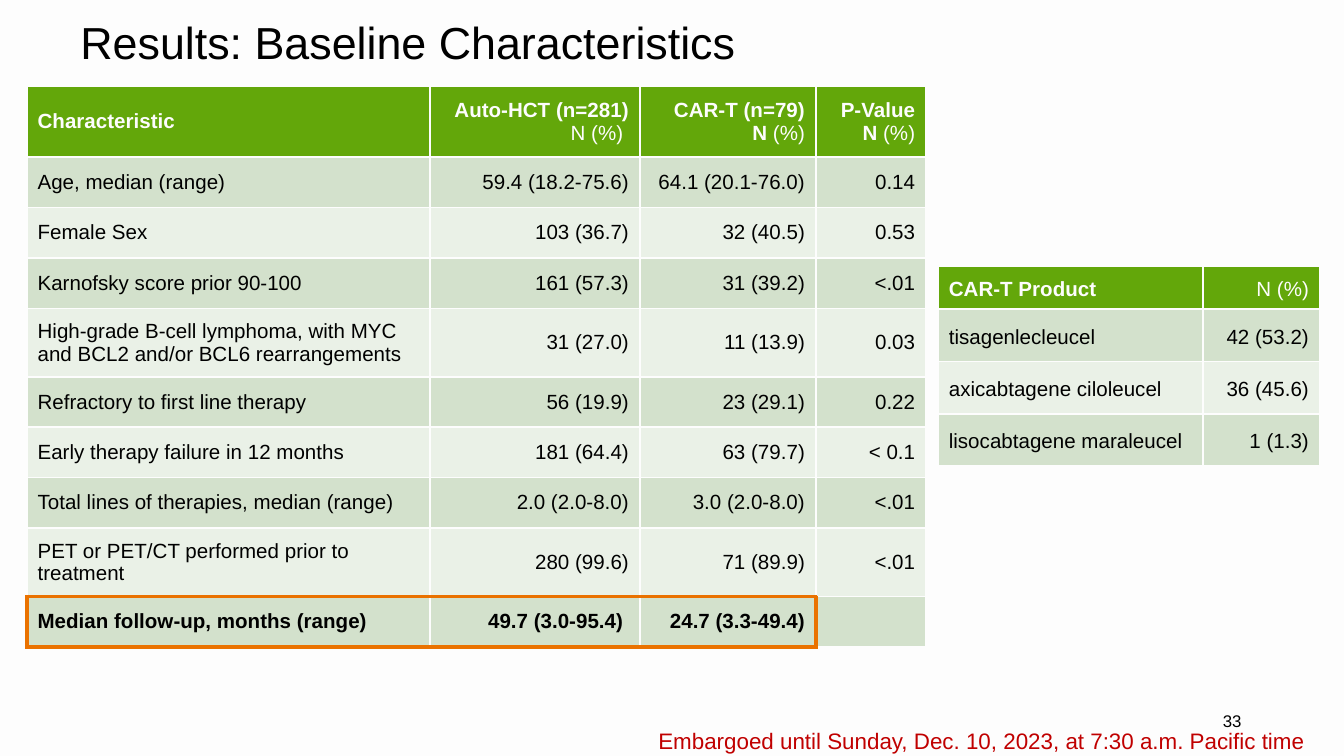
from lxml import etree
from pptx import Presentation
from pptx.dml.color import RGBColor
from pptx.enum.text import MSO_ANCHOR, PP_ALIGN
from pptx.oxml.ns import qn
from pptx.util import Inches, Pt

TOP, MIDDLE, BOTTOM = MSO_ANCHOR.TOP, MSO_ANCHOR.MIDDLE, MSO_ANCHOR.BOTTOM
LEFT, RIGHT = PP_ALIGN.LEFT, PP_ALIGN.RIGHT

COLORS = {
    "paper": "FDFDFD",
    "text": "000000",
    "header": "63A70A",
    "odd": "D3E1CC",
    "even": "EAF1E7",
    "highlight": "EA7200",
    "embargo": "C00000",
}
SIDES = "LRTB"
THIN, HIGHLIGHT_RULE = 1, 2.25

BASELINE_ROWS = [
    ["Characteristic", "Auto-HCT (n=281)\n|N (%) ", "CAR-T (n=79)\nN| (%)", "P-Value\nN| (%)"],
    ["Age, median (range)", "59.4 (18.2-75.6)", "64.1 (20.1-76.0)", "0.14"],
    ["Female Sex", "103 (36.7)", "32 (40.5)", "0.53"],
    ["Karnofsky score prior 90-100", "161 (57.3)", "31 (39.2)", "<.01"],
    ["High-grade B-cell lymphoma, with MYC and BCL2 and/or BCL6 rearrangements",
     "31 (27.0)", "11 (13.9)", "0.03"],
    ["Refractory to first line therapy", "56 (19.9)", "23 (29.1)", "0.22"],
    ["Early therapy failure in 12 months", "181 (64.4)", "63 (79.7)", "< 0.1"],
    ["Total lines of therapies, median (range)", "2.0 (2.0-8.0)", "3.0 (2.0-8.0)", "<.01"],
    ["PET or PET/CT performed prior to treatment", "280 (99.6)", "71 (89.9)", "<.01"],
    ["Median follow-up, months (range)", "49.7 (3.0-95.4) ", "24.7 (3.3-49.4)", ""],
]
PRODUCT_ROWS = [
    ["CAR-T Product", "|N (%)"],
    ["tisagenlecleucel", "42 (53.2)"],
    ["axicabtagene ciloleucel", "36 (45.6)"],
    ["lisocabtagene maraleucel", "1 (1.3)"],
]
PRODUCT_SPACING = {"line_spacing": 1.15, "space_before": Pt(3), "space_after": Pt(3)}


def rgb(name):
    return RGBColor.from_string(COLORS[name])


class Deck:
    """Holds the text style and the slide that is being filled."""

    font = "Arial"
    table_size = 11

    def __init__(self, width, height):
        self.prs = Presentation()
        self.prs.slide_width, self.prs.slide_height = Inches(width), Inches(height)
        self.s = self.prs.slides.add_slide(self.prs.slide_layouts[6])
        fill = self.s.background.fill
        fill.solid()
        fill.fore_color.rgb = rgb("paper")

    def run(self, p, text, size, color, bold=False):
        r = p.add_run()
        r.text = text
        for key, value in {"name": self.font, "size": Pt(size), "bold": bold}.items():
            setattr(r.font, key, value)
        r.font.color.rgb = rgb(color)

    def text(self, box, text, size, color="text", anchor=TOP):
        tf = self.s.shapes.add_textbox(*map(Inches, box)).text_frame
        tf.word_wrap = True
        tf.vertical_anchor = anchor
        self.run(tf.paragraphs[0], text, size, color)

    def border(self, cell, **sides):
        """Draw all four sides thin, except those given as side=(color, points)."""
        props = cell._tc.get_or_add_tcPr()
        for i, side in enumerate(SIDES):
            color, points = sides.get(side, ("paper", THIN))
            tag = qn(f"a:ln{side}")
            for old in props.findall(tag):
                props.remove(old)
            ln = etree.Element(tag, w=str(Pt(points)))
            fill = etree.SubElement(ln, qn("a:solidFill"))
            etree.SubElement(fill, qn("a:srgbClr"), val=COLORS[color])
            props.insert(i, ln)

    def cell(self, cell, text, fill, color, bold, align, spacing):
        """Fill one cell; text after a bar is regular, a newline is a line break."""
        cell.fill.solid()
        cell.fill.fore_color.rgb = rgb(fill)
        layout = {"vertical_anchor": MIDDLE, "margin_left": Inches(0.08),
                  "margin_right": Inches(0.08), "margin_top": 0, "margin_bottom": 0}
        for key, value in layout.items():
            setattr(cell, key, value)
        p = cell.text_frame.paragraphs[0]
        for key, value in {"alignment": align, **spacing}.items():
            setattr(p, key, value)
        for part, weight in zip(text.split("|"), (bold, False)):
            for i, line in enumerate(part.split("\n")):
                if i:
                    p.add_line_break()
                if line:
                    self.run(p, line, self.table_size, color, weight)

    def table(self, left, top, widths, heights, rows, spacing, bold_rows=(0,)):
        box = map(Inches, (left, top, sum(widths), sum(heights)))
        table = self.s.shapes.add_table(len(rows), len(widths), *box).table
        table.first_row = table.horz_banding = False
        for column, width in zip(table.columns, widths):
            column.width = Inches(width)
        for i, (row, height) in enumerate(zip(rows, heights)):
            table.rows[i].height = Inches(height)
            fill = "header" if i == 0 else "odd" if i % 2 else "even"
            for j, text in enumerate(row):
                cell = table.cell(i, j)
                self.cell(cell, text, fill, "text" if i else "paper",
                          i in bold_rows, RIGHT if j else LEFT, spacing)
                self.border(cell)
        return table

    def highlight(self, table, row, count):
        """Frame the first cells of a row, setting both cells at each shared edge."""
        rule = ("highlight", HIGHLIGHT_RULE)
        for j in range(count):
            sides = {"T": rule, "B": rule}
            if j == 0:
                sides["L"] = rule
            if j == count - 1:
                sides["R"] = rule
            self.border(table.cell(row, j), **sides)
            self.border(table.cell(row - 1, j), B=rule)
        self.border(table.cell(row, count), L=rule)


def main():
    deck = Deck(10, 5.625)
    deck.text((0.5, 0.11, 9, 0.45), "Results: Baseline Characteristics", 24, anchor=BOTTOM)

    last = len(BASELINE_ROWS) - 1
    tall = {0: 0.53, 4: 0.51, 8: 0.51}
    heights = [tall.get(i, 0.375) for i in range(last + 1)]
    baseline = deck.table(0.2, 0.64, [3, 1.56, 1.31, 0.82], heights,
                          BASELINE_ROWS, {}, bold_rows=(0, last))
    deck.highlight(baseline, last, 3)

    deck.table(6.98, 1.98, [1.97, 0.87], [0.32] + [0.39] * 3, PRODUCT_ROWS, PRODUCT_SPACING)

    deck.text((9, 5.21, 0.5, 0.3), "33", 9, anchor=MIDDLE)
    deck.text((4.8, 5.36, 5.83, 0.3),
              "Embargoed until Sunday, Dec. 10, 2023, at 7:30 a.m. Pacific time", 12, "embargo")
    deck.prs.save("out.pptx")


if __name__ == "__main__":
    main()
